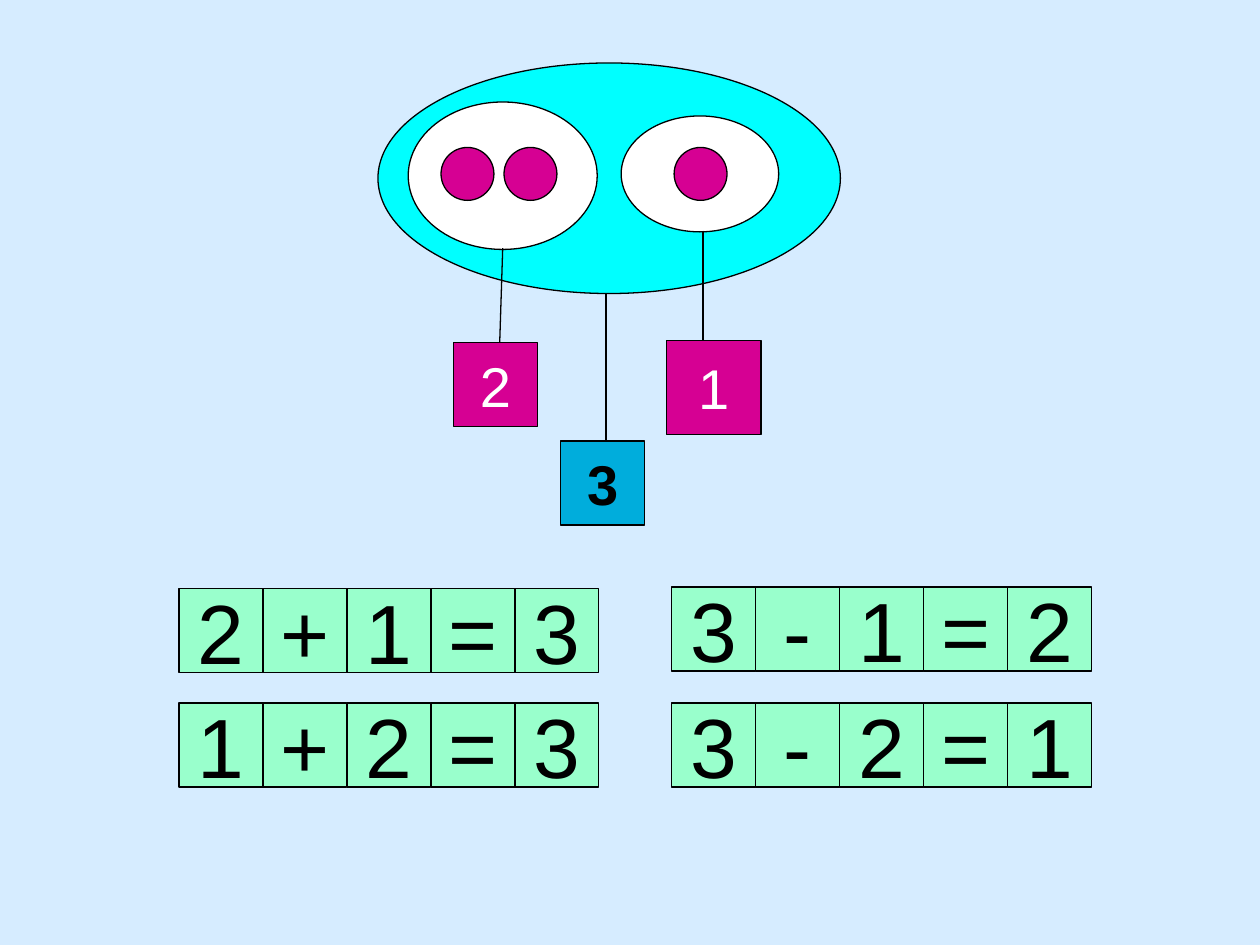
"""Build a slide that splits three into two and one, with its number sentences."""
from lxml.etree import SubElement
from pptx import Presentation
from pptx.dml.color import RGBColor
from pptx.enum.shapes import MSO_CONNECTOR, MSO_SHAPE
from pptx.enum.text import MSO_ANCHOR, PP_ALIGN
from pptx.oxml.ns import qn
from pptx.util import Inches, Pt

COLORS = {
    "back": "D6ECFF",
    "whole": "00FFFF",
    "part": "FFFFFF",
    "dot": "D60093",
    "sum": "00ADDC",
    "cell": "99FFCC",
    "ink": "000000",
}
SIDE = 2 / 3


def add_form(kind, left, top, width, height, fill):
    form = slide.shapes.add_shape(
        kind, Inches(left), Inches(top), Inches(width), Inches(height)
    )
    form.shadow.inherit = False
    form.fill.solid()
    form.fill.fore_color.rgb = RGBColor.from_string(COLORS[fill])
    form.line.color.rgb = RGBColor.from_string(COLORS["ink"])
    form.line.width = Pt(0.75)
    return form


def add_box(text, left, top, side, fill, size, color="ink", bold=False):
    box = add_form(MSO_SHAPE.RECTANGLE, left, top, side, side, fill)
    frame = box.text_frame
    frame.text = text
    frame.word_wrap = False
    frame.vertical_anchor = MSO_ANCHOR.MIDDLE
    line = frame.paragraphs[0]
    line.alignment = PP_ALIGN.CENTER
    font = line.runs[0].font
    font.name = "Arial"
    font.size = Pt(size)
    font.bold = bold
    font.color.rgb = RGBColor.from_string(COLORS[color])


deck = Presentation()
deck.slide_width = Inches(10)
deck.slide_height = Inches(7.5)
slide = deck.slides.add_slide(deck.slide_layouts[6])
slide.background.fill.solid()
slide.background.fill.fore_color.rgb = RGBColor.from_string(COLORS["back"])

ovals = [
    (3, 0.5, 3.67, 1.83, "whole"),
    (4.93, 0.92, 1.25, 0.92, "part"),
    (3.24, 0.81, 1.5, 1.17, "part"),
]
for left, top, width, height, fill in ovals:
    add_form(MSO_SHAPE.OVAL, left, top, width, height, fill)
for left in (3.5, 4, 5.35):
    add_form(MSO_SHAPE.OVAL, left, 1.17, 0.42, 0.42, "dot")

stems = [(3.99, 1.97, 3.96, 2.91), (4.81, 2.33, 4.81, 3.58), (5.58, 1.83, 5.58, 2.7)]
for ends in stems:
    stem = slide.shapes.add_connector(MSO_CONNECTOR.STRAIGHT, *map(Inches, ends))
    stem.line.color.rgb = RGBColor.from_string(COLORS["ink"])
    stem.line.width = Pt(0.75)
    SubElement(stem.element.spPr, qn("a:effectLst"))

add_box("2", 3.6, 2.72, SIDE, "dot", 32, "part")
add_box("3", 4.45, 3.5, SIDE, "sum", 32, bold=True)
add_box("1", 5.29, 2.7, 0.75, "dot", 32, "part")

facts = [
    ("3-1=2", 5.33, 4.66),
    ("3-2=1", 5.33, 5.58),
    ("2+1=3", 1.42, 4.67),
    ("1+2=3", 1.42, 5.58),
]
for fact, left, top in facts:
    for col, sign in enumerate(fact):
        add_box(sign, left + col * SIDE, top, SIDE, "cell", 48)

deck.save("out.pptx")
